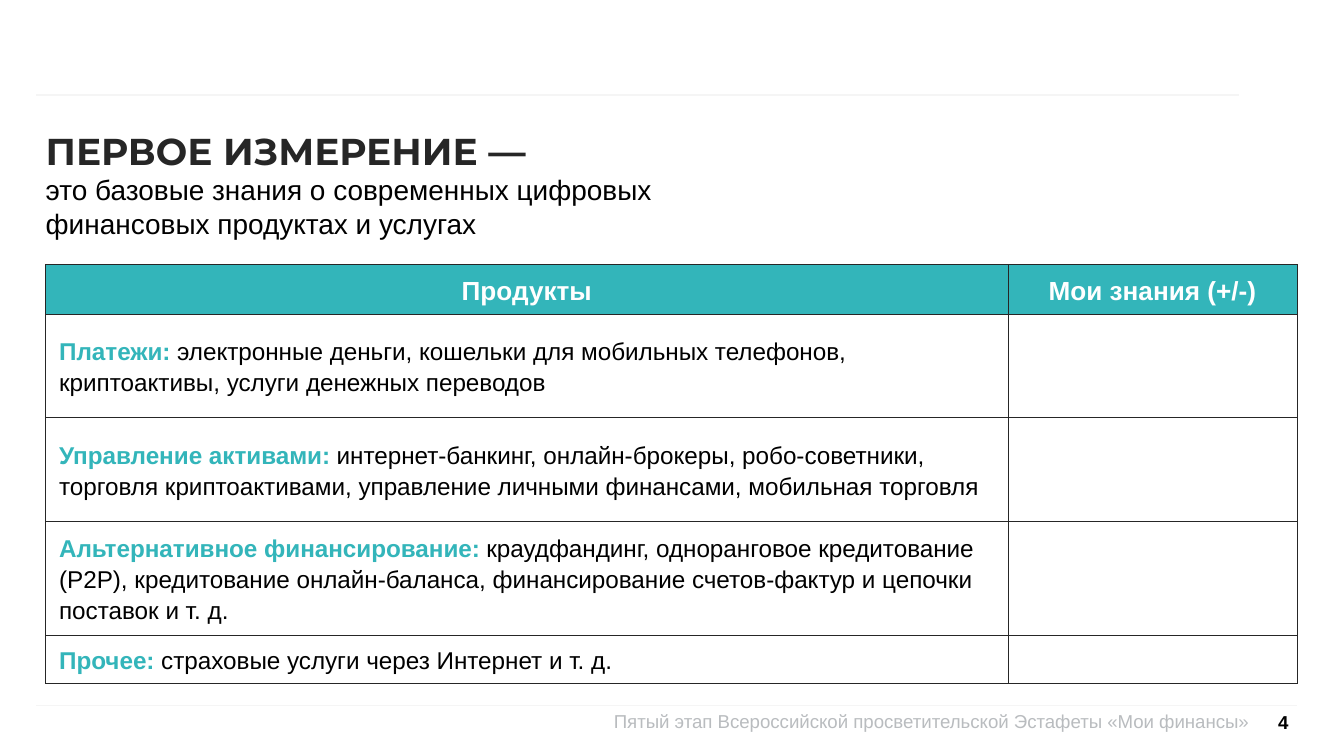
from lxml import etree
from pptx import Presentation
from pptx.dml.color import RGBColor
from pptx.enum.shapes import MSO_CONNECTOR
from pptx.enum.text import MSO_ANCHOR, MSO_AUTO_SIZE, PP_ALIGN
from pptx.oxml.ns import qn
from pptx.util import Inches, Pt

LEFT, CENTER, RIGHT = PP_ALIGN.LEFT, PP_ALIGN.CENTER, PP_ALIGN.RIGHT
TOP, MIDDLE = MSO_ANCHOR.TOP, MSO_ANCHOR.MIDDLE
NO_FIT, GROW = MSO_AUTO_SIZE.NONE, MSO_AUTO_SIZE.SHAPE_TO_FIT_TEXT
STRAIGHT = MSO_CONNECTOR.STRAIGHT

COLORS = {
    "teal": "33B5BA",
    "ink": "262626",
    "black": "000000",
    "white": "FFFFFF",
    "rule": "F5F5F5",
    "footer": "B9BCBF",
}

deck = Presentation()
deck.slide_width, deck.slide_height = Inches(10), Inches(5.625)
page = deck.slides.add_slide(deck.slide_layouts[5])
COLUMN, ROW = deck.slide_width / 100, deck.slide_height / 100


def area(left, top, width, height):
    return [int(left * COLUMN), int(top * ROW), int(width * COLUMN), int(height * ROW)]


def write(para, text, size, color, bold=False, name="Arial"):
    span = para.add_run()
    span.text = text
    for key, value in {"size": Pt(size), "bold": bold, "name": name}.items():
        setattr(span.font, key, value)
    span.font.color.rgb = RGBColor.from_string(COLORS[color])


for right, height in [(92.2, 12.62), (96.5, 93.33)]:
    left, top, width, _ = area(2.7, height, right - 2.7, 0)
    rule = page.shapes.add_connector(STRAIGHT, left, top, left + width, top)
    rule.line.color.rgb = RGBColor.from_string(COLORS["rule"])
    rule.line.width = Pt(1)
    etree.SubElement(rule._element.spPr, qn("a:effectLst"))

title = page.shapes.title
title.left, title.top, title.width, title.height = area(3.4, 16.9, 55.6, 10)
footer = page.shapes.add_textbox(*area(35.8, 93.87, 57.1, 6.1))
number = page.shapes.add_textbox(*area(94.5, 93, 1.9, 5))

for box, margin, anchor, wrap, fit, align in [
    (title, 0, TOP, True, NO_FIT, LEFT),
    (footer, 0, TOP, True, NO_FIT, RIGHT),
    (number, 0.06, MIDDLE, False, GROW, RIGHT),
]:
    frame_format = {"vertical_anchor": anchor, "word_wrap": wrap, "auto_size": fit}
    for side in ["left", "top", "right", "bottom"]:
        frame_format[f"margin_{side}"] = Inches(margin)
    for key, value in frame_format.items():
        setattr(box.text_frame, key, value)
    box.text_frame.paragraphs[0].alignment = align

heading = title.text_frame.paragraphs[0]
write(heading, "ПЕРВОЕ ИЗМЕРЕНИЕ —", 20, "ink", True, "Montserrat")
subtitle = title.text_frame.add_paragraph()
subtitle.alignment = LEFT
write(subtitle, "это базовые знания о современных цифровых финансовых продуктах и услугах", 15, "black")
write(
    footer.text_frame.paragraphs[0],
    "Пятый этап Всероссийской просветительской Эстафеты «Мои финансы»",
    10,
    "footer",
)
write(number.text_frame.paragraphs[0], "4", 10, "black", True)

headers = ["Продукты", "Мои знания (+/-)"]
products = [
    ("Платежи: ", "электронные деньги, кошельки для мобильных телефонов, криптоактивы, услуги денежных переводов"),
    ("Управление активами: ", "интернет-банкинг, онлайн-брокеры, робо-советники, торговля криптоактивами, управление личными финансами, мобильная торговля"),
    ("Альтернативное финансирование: ", "краудфандинг, одноранговое кредитование (P2P), кредитование онлайн-баланса, финансирование счетов-фактур и цепочки поставок и т. д."),
    ("Прочее: ", "страховые услуги через Интернет и т. д."),
]
table = page.shapes.add_table(len(products) + 1, len(headers), *area(3.4, 35, 93.1, 53.9)).table
for column, share in zip(table.columns, [71.6, 21.5]):
    column.width = int(share * COLUMN)
for row, share in zip(table.rows, [6.4, 13.7, 13.7, 13.7, 6.4]):
    row.height = int(share * ROW)

for cell in table.iter_cells():
    cell.vertical_anchor = MIDDLE
    cell.text_frame.paragraphs[0].line_spacing = 1.15
    properties = cell._tc.get_or_add_tcPr()
    for side in ["lnL", "lnR", "lnT", "lnB"]:
        border = etree.SubElement(properties, qn(f"a:{side}"), w=str(Pt(0.5)))
        fill = etree.SubElement(border, qn("a:solidFill"))
        etree.SubElement(fill, qn("a:srgbClr"), val=COLORS["ink"])
    cell.fill.background()

for position, header in enumerate(headers):
    cell = table.cell(0, position)
    cell.fill.solid()
    cell.fill.fore_color.rgb = RGBColor.from_string(COLORS["teal"])
    para = cell.text_frame.paragraphs[0]
    para.alignment = CENTER
    write(para, header, 14, "white", True)

for position, (product, examples) in enumerate(products, 1):
    para = table.cell(position, 0).text_frame.paragraphs[0]
    write(para, product, 13, "teal", True)
    write(para, examples, 13, "black")
    answer = table.cell(position, 1).text_frame.paragraphs[0]
    etree.SubElement(answer._p, qn("a:endParaRPr"), sz="1300")

deck.save("out.pptx")
